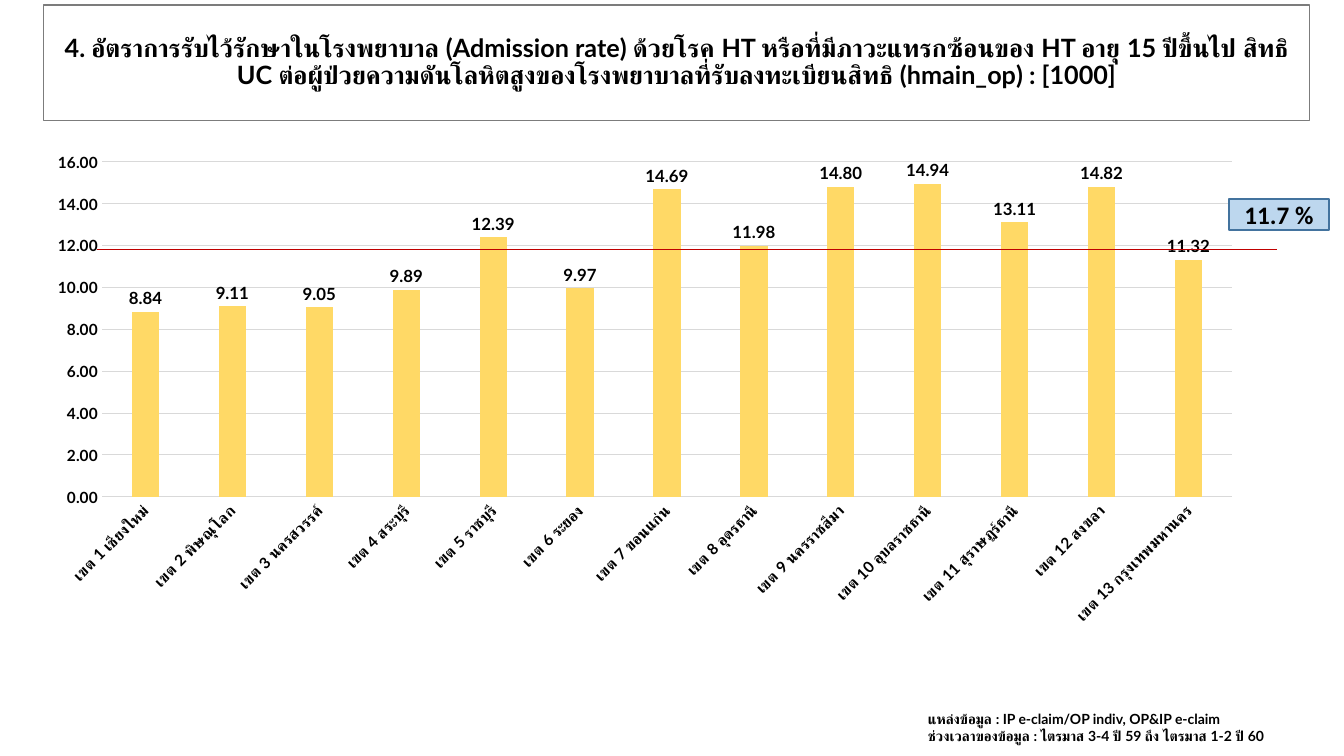
from dataclasses import dataclass

from lxml import etree
from pptx import Presentation
from pptx import util as u
from pptx.chart.data import CategoryChartData
from pptx.dml.color import RGBColor
from pptx.enum import chart as ch, shapes, text
from pptx.oxml import ns

EMU_PER_PX = 914400 / 100.8
TITLE = ("4. อัตราการรับไว้รักษาในโรงพยาบาล (Admission rate) ด้วยโรค HT "
         "หรือที่มีภาวะแทรกซ้อนของ HT อายุ 15 ปีขึ้นไป สิทธิ UC "
         "ต่อผู้ป่วยความดันโลหิตสูงของโรงพยาบาลที่รับลงทะเบียนสิทธิ (hmain_op) : [1000]")
RATES = {
    "เชียงใหม่": 8.84, "พิษณุโลก": 9.11, "นครสวรรค์": 9.05, "สระบุรี": 9.89,
    "ราชบุรี": 12.39, "ระยอง": 9.97, "ขอนแก่น": 14.69, "อุดรธานี": 11.98,
    "นครราชสีมา": 14.8, "อุบลราชธานี": 14.94, "สุราษฎร์ธานี": 13.11,
    "สงขลา": 14.82, "กรุงเทพมหานคร": 11.32,
}
SOURCES = ["แหล่งข้อมูล : IP e-claim/OP indiv, OP&IP e-claim",
           "ช่วงเวลาของข้อมูล : ไตรมาส 3-4 ปี 59 ถึง ไตรมาส 1-2 ปี 60"]


@dataclass(frozen=True)
class Theme:
    font: str = "Lato"
    badge_font: str = "Calibri"
    ink: str = "000000"
    paper: str = "FFFFFF"
    frame: str = "7C7C7C"
    grid: str = "D9D9D9"
    bar: str = "FFD966"
    average: str = "C00000"
    badge: str = "BDD7EE"
    badge_edge: str = "43739E"
    title_size: int = 18
    label_size: int = 12
    axis_size: int = 11
    source_size: int = 10


def px(n):
    return u.Emu(round(n * EMU_PER_PX))


def rgb(code):
    return RGBColor.from_string(code)


class SlideBuilder:
    def __init__(self, prs, theme):
        self.theme = theme
        self.slide = prs.slides.add_slide(prs.slide_layouts[5])

    def style_font(self, font, size, name=None):
        font.name = name or self.theme.font
        font.size = u.Pt(size)
        font.bold = True
        font.color.rgb = rgb(self.theme.ink)

    def set_text(self, sp, lines, size, name=None, align=text.PP_ALIGN.LEFT):
        tf = sp.text_frame
        tf.text = "\n".join(lines)
        tf.word_wrap = True
        for p in tf.paragraphs:
            p.alignment = align
            for r in p.runs:
                self.style_font(r.font, size, name)
        return tf

    def paint(self, sp, fill, line, width):
        sp.fill.solid()
        sp.fill.fore_color.rgb = rgb(fill)
        self.stroke(sp.line, line, width)

    def stroke(self, line, color, width):
        line.color.rgb = rgb(color)
        line.width = u.Pt(width)

    def title(self, words, x, y, w, h):
        sp = self.slide.shapes.title
        sp.left, sp.top, sp.width, sp.height = map(px, (x, y, w, h))
        self.paint(sp, self.theme.paper, self.theme.frame, 0.75)
        tf = self.set_text(sp, [words], self.theme.title_size, align=text.PP_ALIGN.CENTER)
        tf.vertical_anchor = text.MSO_ANCHOR.MIDDLE
        tf.auto_size = text.MSO_AUTO_SIZE.NONE
        tf.paragraphs[0].line_spacing = 0.9

    def column_chart(self, rates, box, plot_box):
        t = self.theme
        data = CategoryChartData(number_format="0.00")
        data.categories = [f"เขต {i} {name}" for i, name in enumerate(rates, 1)]
        data.add_series("Series 1", rates.values())
        chart = self.slide.shapes.add_chart(
            ch.XL_CHART_TYPE.COLUMN_CLUSTERED, *map(px, box), data).chart
        chart.has_legend = chart.has_title = False
        self.style_font(chart.font, t.label_size)

        plot = chart.plots[0]
        plot.gap_width, plot.overlap = 219, -27
        plot.vary_by_categories = False
        fill = plot.series[0].format.fill
        fill.solid()
        fill.fore_color.rgb = rgb(t.bar)
        plot.has_data_labels = True
        labels = plot.data_labels
        labels.show_value = True
        labels.number_format, labels.number_format_is_linked = "0.00", False
        labels.position = ch.XL_LABEL_POSITION.OUTSIDE_END
        self.style_font(labels.font, t.label_size)

        cat, val = chart.category_axis, chart.value_axis
        for axis in (cat, val):
            axis.major_tick_mark = axis.minor_tick_mark = ch.XL_TICK_MARK.NONE
            self.style_font(axis.tick_labels.font, t.axis_size)
        self.stroke(cat.format.line, t.grid, 0.75)
        cat._element.find(ns.qn("c:txPr")).find(ns.qn("a:bodyPr")).set("rot", "-2700000")
        val.minimum_scale, val.maximum_scale, val.major_unit = 0, 16, 2
        val.tick_labels.number_format = "0.00"
        val.tick_labels.number_format_is_linked = False
        val.format.line.fill.background()
        self.stroke(val.major_gridlines.format.line, t.grid, 0.75)
        self.place_plot(chart, box, plot_box)

    def place_plot(self, chart, box, plot_box):
        """Fix the inner plot area, given in slide px, within the chart box."""
        x, y, w, h = box
        left, top, width, height = plot_box
        area = chart._chartSpace.find(".//" + ns.qn("c:plotArea"))
        layout = area.find(ns.qn("c:layout"))
        if layout is None:
            layout = etree.Element(ns.qn("c:layout"))
            area.insert(0, layout)
        manual = etree.SubElement(layout, ns.qn("c:manualLayout"))
        settings = {"layoutTarget": "inner", "xMode": "edge", "yMode": "edge",
                    "x": (left - x) / w, "y": (top - y) / h,
                    "w": width / w, "h": height / h}
        for tag, value in settings.items():
            etree.SubElement(manual, ns.qn(f"c:{tag}")).set("val", str(value))

    def average_line(self, x1, x2, y):
        line = self.slide.shapes.add_connector(
            shapes.MSO_CONNECTOR.STRAIGHT, *map(px, (x1, y, x2, y)))
        self.stroke(line.line, self.theme.average, 0.5)
        etree.SubElement(line._element.spPr, ns.qn("a:effectLst"))

    def badge(self, words, x, y, w, h):
        sp = self.slide.shapes.add_shape(
            shapes.MSO_SHAPE.RECTANGLE, *map(px, (x, y, w, h)))
        sp.shadow.inherit = False
        self.paint(sp, self.theme.badge, self.theme.badge_edge, 1)
        tf = self.set_text(sp, [words], self.theme.title_size,
                           self.theme.badge_font, text.PP_ALIGN.CENTER)
        tf.vertical_anchor = text.MSO_ANCHOR.MIDDLE

    def source_note(self, lines, x, y, w, h):
        sp = self.slide.shapes.add_textbox(*map(px, (x, y, w, h)))
        tf = self.set_text(sp, lines, self.theme.source_size)
        tf.auto_size = text.MSO_AUTO_SIZE.SHAPE_TO_FIT_TEXT


def main():
    prs = Presentation()
    prs.slide_width, prs.slide_height = px(1344), px(756)
    s = SlideBuilder(prs, Theme())
    s.title(TITLE, 43, 5, 1267, 116)
    s.column_chart(RATES, (33, 143, 1224, 492), (102, 162, 1130, 335))
    s.average_line(97, 1277, 249)
    s.badge("11.7 %", 1229, 199, 100, 31)
    s.source_note(SOURCES, 918, 706, 413, 44)
    prs.save("out.pptx")


if __name__ == "__main__":
    main()
